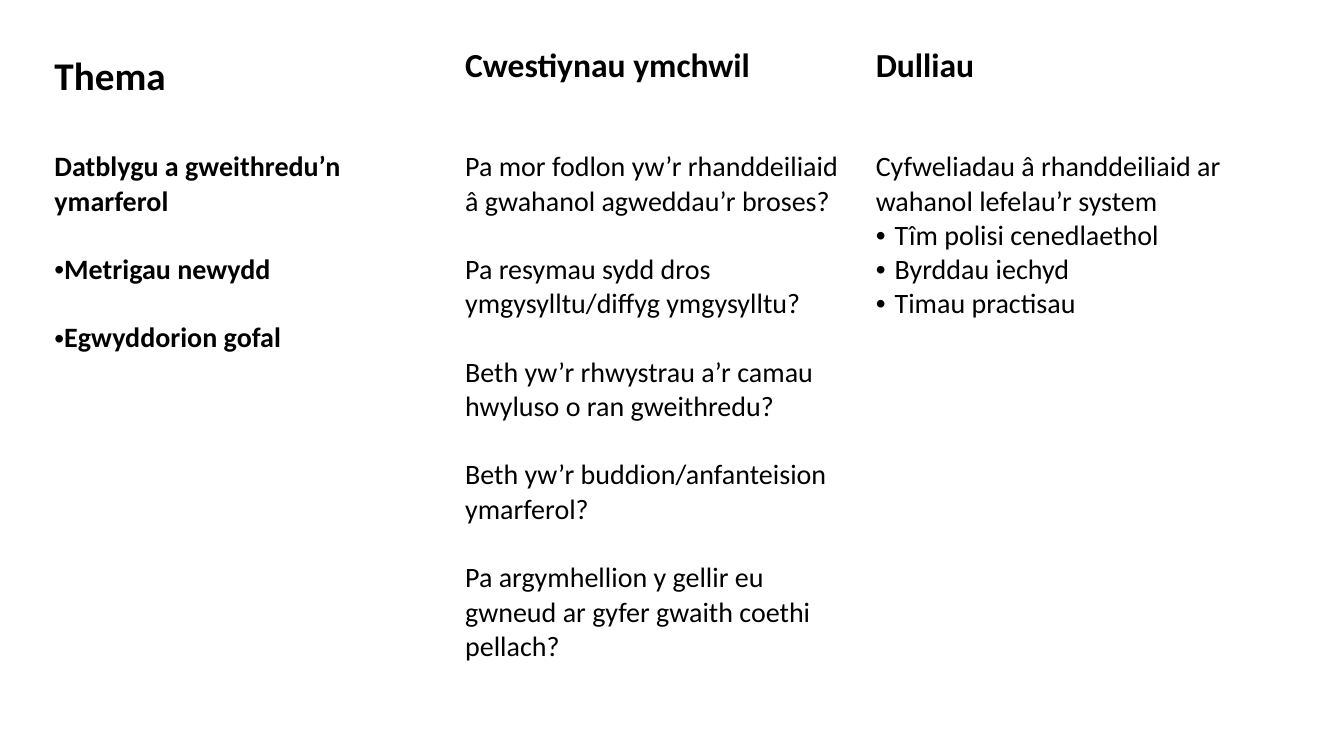
from lxml import etree
from pptx import Presentation
from pptx.dml.color import RGBColor
from pptx.enum.text import MSO_ANCHOR, PP_ALIGN
from pptx.oxml.ns import qn
from pptx.util import Pt

TOP = MSO_ANCHOR.TOP
LEFT = PP_ALIGN.LEFT

FONT = "Calibri"
BLACK, WHITE = "000000", "FFFFFF"
LINE_HEIGHT = 1.22  # of the font size
BODY_SIZE = 20
SIDE_INSET, EDGE_INSET = 7.2, 3.6
BLANK_LAYOUT = 6

# Each column: heading, heading size, then body lines as
# (text, bold, bullet indent or None, starts a new group)
COLUMNS = [
    ("Thema", 28, [
        ("Datblygu a gweithredu’n ymarferol", True, None, False),
        ("Metrigau newydd", True, 0, True),
        ("Egwyddorion gofal", True, 0, True),
    ]),
    ("Cwestiynau ymchwil", 24, [
        ("Pa mor fodlon yw’r rhanddeiliaid â gwahanol agweddau’r broses?", False, None, False),
        ("Pa resymau sydd dros ymgysylltu/diffyg ymgysylltu?", False, None, True),
        ("Beth yw’r rhwystrau a’r camau hwyluso o ran gweithredu?", False, None, True),
        ("Beth yw’r buddion/anfanteision ymarferol?", False, None, True),
        ("Pa argymhellion y gellir eu gwneud ar gyfer gwaith coethi pellach?", False, None, True),
    ]),
    ("Dulliau", 24, [
        ("Cyfweliadau â rhanddeiliaid ar wahanol lefelau’r system", False, None, False),
        ("Tîm polisi cenedlaethol", False, 13.5, False),
        ("Byrddau iechyd", False, 13.5, False),
        ("Timau practisau", False, 13.5, False),
    ]),
]


def color(value):
    return RGBColor.from_string(value)


def set_all(target, values):
    for name, value in values.items():
        setattr(target, name, value)


def add_bullet(paragraph, indent):
    properties = paragraph._p.get_or_add_pPr()
    properties.set("marL", str(Pt(indent)))
    properties.set("indent", str(-Pt(indent)))
    etree.SubElement(properties, qn("a:buFont")).set("typeface", "Arial")
    etree.SubElement(properties, qn("a:buChar")).set("char", "•")


def add_borders(cell):
    properties = cell._tc.get_or_add_tcPr()
    for side in ("lnL", "lnR", "lnT", "lnB"):
        border = etree.SubElement(properties, qn("a:" + side), w=str(Pt(0.75)))
        fill = etree.SubElement(border, qn("a:solidFill"))
        etree.SubElement(fill, qn("a:srgbClr")).set("val", WHITE)


def fill_cell(cell, lines, size):
    """Write lines one text line below the top of the cell."""
    line_space = size * LINE_HEIGHT
    add_borders(cell)
    cell.fill.background()
    set_all(cell, {
        "margin_left": Pt(SIDE_INSET), "margin_right": Pt(SIDE_INSET),
        "margin_top": Pt(EDGE_INSET + line_space), "margin_bottom": Pt(EDGE_INSET),
        "vertical_anchor": TOP,
    })
    for index, (text, bold, indent, new_group) in enumerate(lines):
        frame = cell.text_frame
        paragraph = frame.add_paragraph() if index else frame.paragraphs[0]
        paragraph.alignment = LEFT
        if new_group:
            paragraph.space_before = Pt(line_space)
        if indent is not None:
            add_bullet(paragraph, indent)
        run = paragraph.add_run()
        run.text = text
        set_all(run.font, {"name": FONT, "size": Pt(size), "bold": bold})
        run.font.color.rgb = color(BLACK)


def add_research_table(slide, left, top, width, row_heights):
    frame = slide.shapes.add_table(
        len(row_heights), len(COLUMNS),
        Pt(left), Pt(top), Pt(width), Pt(sum(row_heights)))
    table = frame.table
    set_all(table, {"first_row": False, "horz_banding": False})
    for row, height in zip(table.rows, row_heights):
        row.height = Pt(height)
    for index, (heading, heading_size, body) in enumerate(COLUMNS):
        table.columns[index].width = Pt(width / len(COLUMNS))
        fill_cell(table.cell(0, index), [(heading, True, None, False)], heading_size)
        fill_cell(table.cell(1, index), body, BODY_SIZE)


def main():
    deck = Presentation()
    set_all(deck, {"slide_width": Pt(960), "slide_height": Pt(540)})
    slide = deck.slides.add_slide(deck.slide_layouts[BLANK_LAYOUT])
    add_research_table(slide, left=31.7, top=0, width=880, row_heights=(79.2, 470))
    deck.save("out.pptx")


if __name__ == "__main__":
    main()
